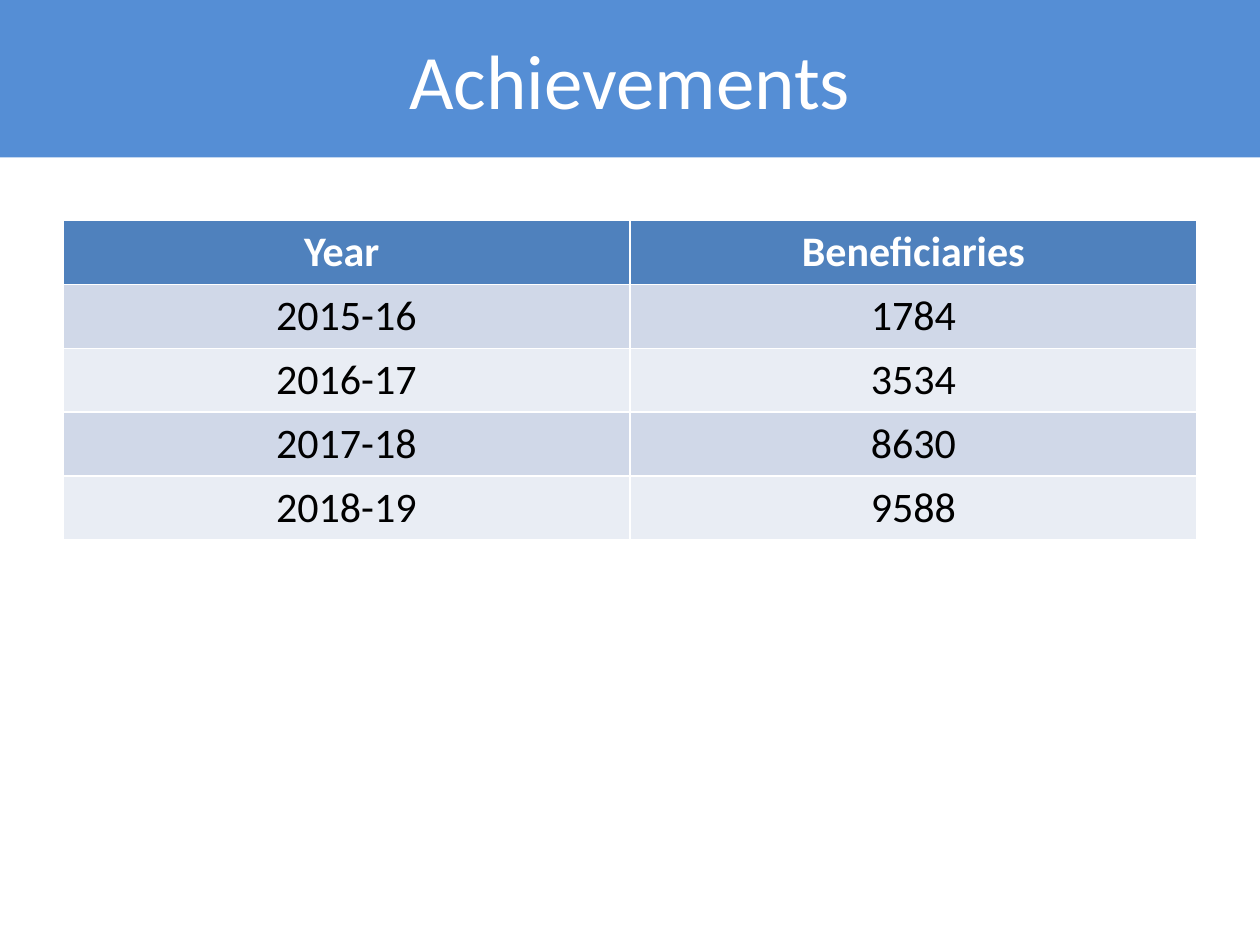
from typing import NamedTuple

from pptx import Presentation
from pptx.dml.color import RGBColor
from pptx.enum import text
from pptx.util import Inches, Pt

FONT = "Calibri"
COLORS = {
    "banner": "558ED5",
    "header": "4F81BD",
    "band_dark": "D0D8E8",
    "band_light": "E9EDF4",
    "white": "FFFFFF",
    "black": "000000",
}


class YearResult(NamedTuple):
    year: str
    beneficiaries: str


HEADINGS = YearResult("Year ", "Beneficiaries")
RESULTS = [
    YearResult("2015-16", "1784"),
    YearResult("2016-17", "3534"),
    YearResult("2017-18", "8630"),
    YearResult("2018-19", "9588"),
]


def set_fill(target, color: str) -> None:
    """Give a shape or a table cell a solid fill."""
    target.fill.solid()
    target.fill.fore_color.rgb = RGBColor.from_string(COLORS[color])


def set_text(target, words: str, size: int, color: str, bold: bool = False) -> None:
    """Write one centred line into a shape or a table cell."""
    target.vertical_anchor = None if not hasattr(target, "vertical_anchor") else target.vertical_anchor
    paragraph = target.text_frame.paragraphs[0]
    paragraph.text = words
    paragraph.alignment = text.PP_ALIGN.CENTER
    font = paragraph.runs[0].font
    font.name = FONT
    font.size = Pt(size)
    font.bold = bold
    font.color.rgb = RGBColor.from_string(COLORS[color])


def add_banner_title(slide, words: str) -> None:
    title = slide.shapes.title
    title.left, title.top = Inches(0), Inches(0)
    title.width, title.height = Inches(10), Inches(1.25)
    title.text_frame.vertical_anchor = text.MSO_ANCHOR.MIDDLE
    set_fill(title, "banner")
    set_text(title, words, 44, "white")


def add_results_table(slide, headings: YearResult, results: list[YearResult]) -> None:
    rows = [headings, *results]
    table = slide.shapes.add_table(
        len(rows), len(headings), Inches(0.5), Inches(1.75), Inches(9), Inches(2.5)
    ).table
    for row_index, row in enumerate(rows):
        is_header = row_index == 0
        band = "band_dark" if row_index % 2 else "band_light"
        for column_index, words in enumerate(row):
            cell = table.cell(row_index, column_index)
            set_fill(cell, "header" if is_header else band)
            set_text(cell, words, 24, "white" if is_header else "black", is_header)


def main() -> None:
    presentation = Presentation()
    presentation.slide_width, presentation.slide_height = Inches(10), Inches(7.5)
    slide = presentation.slides.add_slide(presentation.slide_layouts[5])
    add_banner_title(slide, "Achievements")
    add_results_table(slide, HEADINGS, RESULTS)
    presentation.save("out.pptx")


if __name__ == "__main__":
    main()
